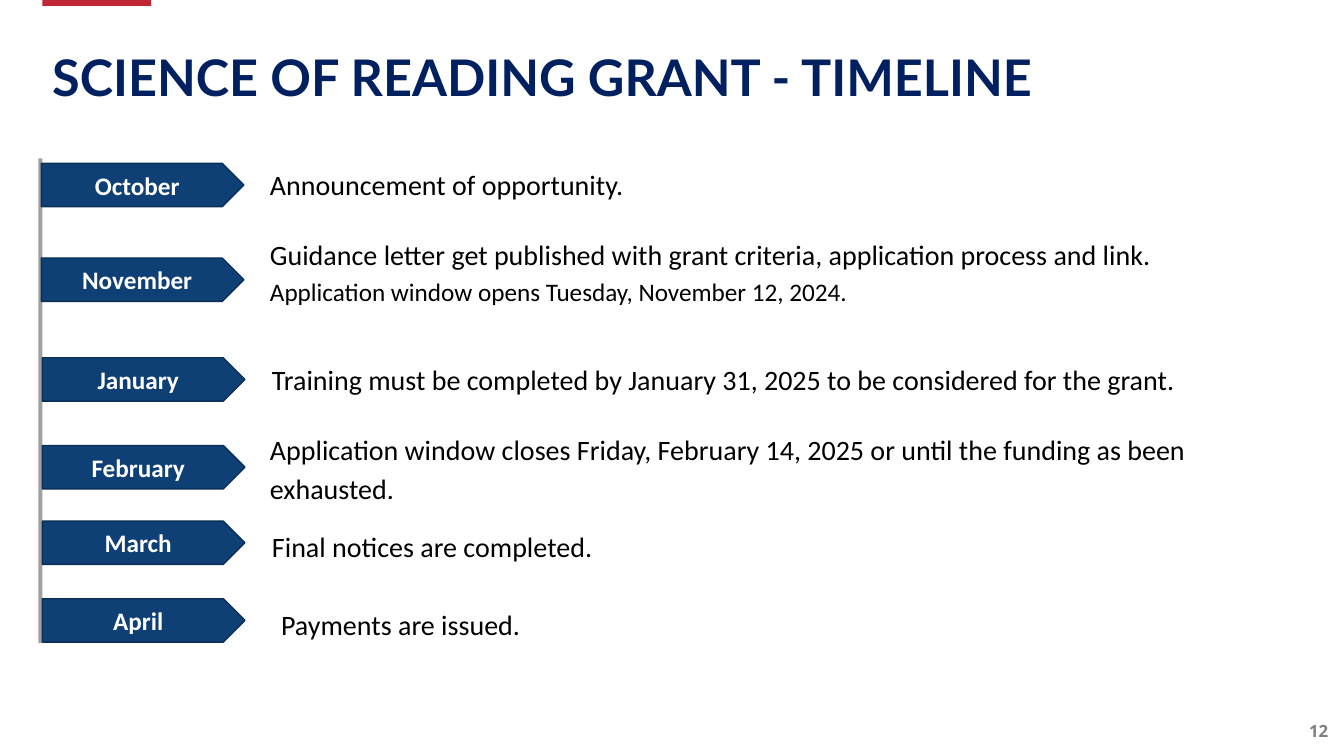
from dataclasses import dataclass

from pptx import Presentation
from pptx.dml.color import RGBColor
from pptx.enum.shapes import MSO_SHAPE
from pptx.enum.text import MSO_ANCHOR, MSO_AUTO_SIZE, PP_ALIGN
from pptx.shapes.autoshape import Shape
from pptx.slide import Slide
from pptx.util import Inches, Length, Pt

RECT = MSO_SHAPE.RECTANGLE
PENTAGON = MSO_SHAPE.PENTAGON
TOP, MIDDLE = MSO_ANCHOR.TOP, MSO_ANCHOR.MIDDLE
LEFT, CENTER = PP_ALIGN.LEFT, PP_ALIGN.CENTER
GROW = MSO_AUTO_SIZE.SHAPE_TO_FIT_TEXT

COLS, ROWS = 133.33, 75
TAG_W, TAG_H = 20.1, 4.3
NOTE_W = 102.6
NOTE_INDENT = 5


@dataclass(frozen=True)
class Style:
    font: str
    size: int
    color: str
    bold: bool = False
    spacing: float = 1.0


@dataclass(frozen=True)
class Theme:
    accent: str = "C12637"
    rail: str = "A1A1A1"
    tag_fill: str = "0E3F75"
    tag_line: str = "0A2F57"
    title: Style = Style("Lato", 36, "002060", True, 0.9)
    tag: Style = Style("Calibri", 18, "FFFFFF", True)
    note: Style = Style("Calibri", 20, "000000", False, 1.15)
    note_lead: Style = Style("Calibri", 20, "000000")
    note_detail: Style = Style("Calibri", 18, "000000", False, 1.15)
    number: Style = Style("Open Sans", 12, "808080", True)


THEME = Theme()


@dataclass(frozen=True)
class Box:
    col: float
    row: float
    cols: float
    rows: float


@dataclass(frozen=True)
class Line:
    text: str
    style: Style = THEME.note


@dataclass(frozen=True)
class Step:
    month: str
    tag_col: float
    tag_row: float
    note_col: float
    note_row: float
    note_rows: float
    lines: tuple[Line, ...]


STEPS = (
    Step("October", 4.1, 16.2, 20.8, 15.6, 4.7,
         (Line("Announcement of opportunity."),)),
    Step("November", 4.1, 25.6, 20.8, 23.1, 7.8,
         (Line("Guidance letter get published with grant criteria, application process and link.",
               THEME.note_lead),
          Line("Application window opens Tuesday, November 12, 2024.", THEME.note_detail))),
    Step("January", 4.2, 35.5, 21, 35, 4.7,
         (Line("Training must be completed by January 31, 2025 to be considered for the grant."),)),
    Step("February", 4.2, 44.2, 20.8, 41.9, 8.5,
         (Line("Application window closes Friday, February 14, 2025 or until the funding as been "
               "exhausted."),)),
    Step("March", 4.2, 51.7, 21, 51.5, 4.7,
         (Line("Final notices are completed."),)),
    Step("April", 4.2, 59.4, 21.9, 59.3, 4.7,
         (Line("Payments are issued."),)),
)


def grid(units: float) -> Length:
    return Inches(units / 10)


def place(box: Box) -> tuple[Length, Length, Length, Length]:
    return grid(box.col), grid(box.row), grid(box.cols), grid(box.rows)


def write(sp: Shape, lines: tuple[Line, ...], align: PP_ALIGN = LEFT,
          anchor: MSO_ANCHOR = TOP, indent: float = 0) -> None:
    tf = sp.text_frame
    tf.word_wrap = True
    tf.vertical_anchor = anchor
    for i, line in enumerate(lines):
        p = tf.add_paragraph() if i else tf.paragraphs[0]
        p.text = line.text
        p.alignment = align
        p.line_spacing = line.style.spacing
        if indent:
            p.level = 1
            pPr = p._p.get_or_add_pPr()
            pPr.set("marL", str(grid(indent)))
            pPr.set("indent", "0")
        p.font.name = line.style.font
        p.font.size = Pt(line.style.size)
        p.font.bold = line.style.bold
        p.font.color.rgb = RGBColor.from_string(line.style.color)


def add_block(s: Slide, kind: MSO_SHAPE, box: Box, fill: str, outline: str = "") -> Shape:
    sp = s.shapes.add_shape(kind, *place(box))
    sp.shadow.inherit = False
    sp.fill.solid()
    sp.fill.fore_color.rgb = RGBColor.from_string(fill)
    if outline:
        sp.line.color.rgb = RGBColor.from_string(outline)
        sp.line.width = Pt(1)
    else:
        sp.line.fill.background()
    return sp


def add_text(s: Slide, box: Box, lines: tuple[Line, ...], align: PP_ALIGN = LEFT,
             anchor: MSO_ANCHOR = TOP, indent: float = 0) -> Shape:
    sp = s.shapes.add_textbox(*place(box))
    write(sp, lines, align, anchor, indent)
    return sp


def add_step(s: Slide, step: Step) -> None:
    tag = add_block(s, PENTAGON, Box(step.tag_col, step.tag_row, TAG_W, TAG_H),
                    THEME.tag_fill, THEME.tag_line)
    write(tag, (Line(step.month, THEME.tag),), CENTER, MIDDLE)
    note = add_text(s, Box(step.note_col, step.note_row, NOTE_W, step.note_rows),
                    step.lines, indent=NOTE_INDENT)
    note.text_frame.auto_size = GROW


def main() -> None:
    prs = Presentation()
    prs.slide_width, prs.slide_height = grid(COLS), grid(ROWS)
    s = prs.slides.add_slide(prs.slide_layouts[6])
    add_block(s, RECT, Box(4.2, -0.4, 10.8, 1), THEME.accent)
    add_text(s, Box(COLS - 5, ROWS - 5, 5, 5), (Line("12", THEME.number),), CENTER, MIDDLE)
    add_text(s, Box(4.2, 4.8, 125, 10.7),
             (Line("SCIENCE OF READING GRANT - TIMELINE", THEME.title),))
    add_block(s, RECT, Box(3.8, 15.7, 0.4, 48.1), THEME.rail)
    for step in STEPS:
        add_step(s, step)
    prs.save("out.pptx")


if __name__ == "__main__":
    main()
